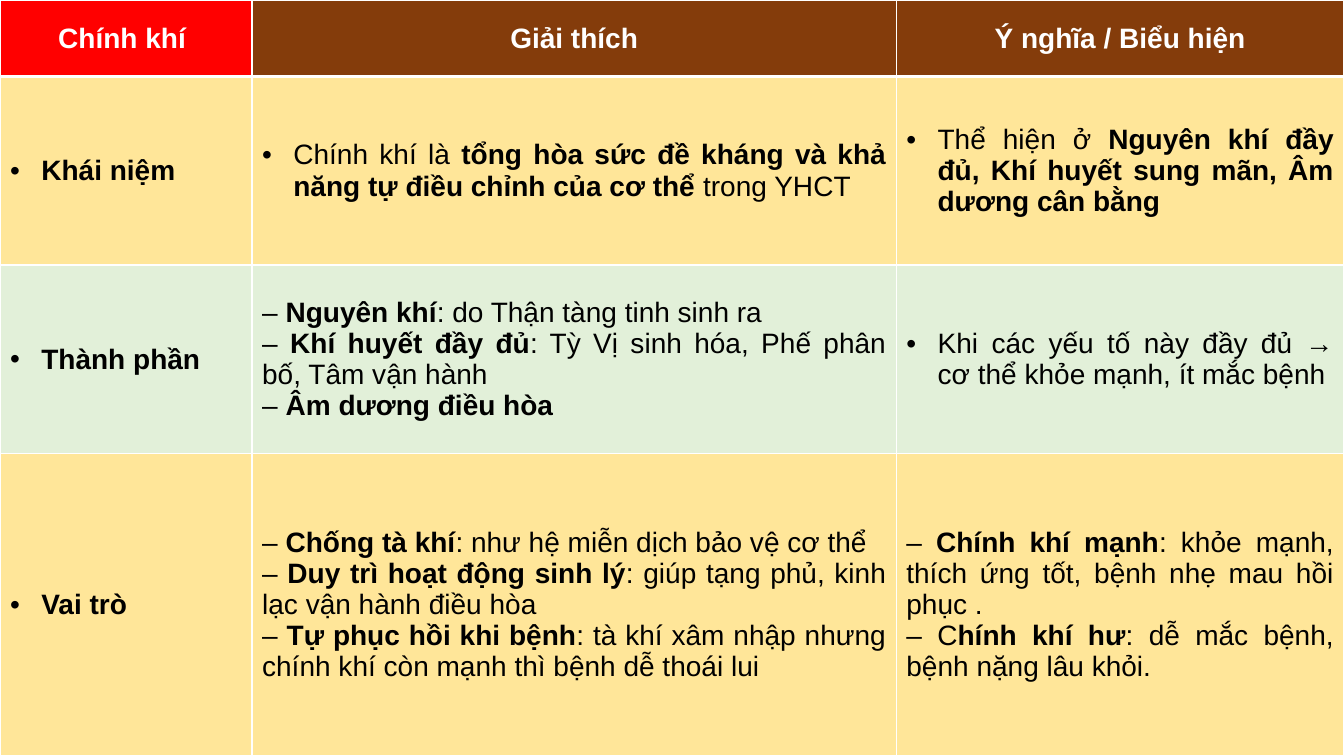
"""Build a slide with a full-page table about Chính khí."""
from lxml.etree import SubElement
from pptx import Presentation
from pptx.dml.color import RGBColor
from pptx.enum.text import MSO_ANCHOR, PP_ALIGN
from pptx.oxml import parse_xml
from pptx.oxml.ns import nsdecls, qn
from pptx.util import Inches, Pt

COLORS = {"white": "FFFFFF", "black": "000000", "red": "FF0000",
          "brown": "843C0B", "yellow": "FFE699", "green": "E2F0D9"}
COL_WIDTHS = [2.5, 6.39, 4.44]
ROW_HEIGHTS = [0.76, 1.87, 1.87, 3]
ROW_FILLS = ["brown", "yellow", "green", "yellow"]

# Asterisks enclose bold text; each string is one paragraph.
ROWS = [
    [["*Chính khí *"], ["*Giải thích*"], ["*Ý nghĩa / Biểu hiện*"]],
    [["*Khái niệm*"],
     ["Chính khí là *tổng hòa sức đề kháng và khả năng tự điều chỉnh "
      "của cơ thể* trong YHCT"],
     ["Thể hiện ở *Nguyên khí đầy đủ, Khí huyết sung mãn, "
      "Âm dương cân bằng*"]],
    [["*Thành phần*"],
     ["– *Nguyên khí*: do Thận tàng tinh sinh ra ",
      "– *Khí huyết đầy đủ*: Tỳ Vị sinh hóa, Phế phân bố, Tâm vận hành ",
      "– *Âm dương điều hòa*"],
     ["Khi các yếu tố này đầy đủ → cơ thể khỏe mạnh, ít mắc bệnh"]],
    [["*Vai trò*"],
     ["– *Chống tà khí*: như hệ miễn dịch bảo vệ cơ thể ",
      "– *Duy trì hoạt động sinh lý*: giúp tạng phủ, kinh lạc vận hành "
      "điều hòa ",
      "– *Tự phục hồi khi bệnh*: tà khí xâm nhập nhưng chính khí còn mạnh "
      "thì bệnh dễ thoái lui"],
     ["– *Chính khí mạnh*: khỏe mạnh, thích ứng tốt, bệnh nhẹ mau hồi "
      "phục .",
      "– C*hính khí hư*: dễ mắc bệnh, bệnh nặng lâu khỏi."]],
]


def set_borders(cell, row):
    """Draw white borders, with a thicker line under the header."""
    tcPr = cell._tc.get_or_add_tcPr()
    for i, side in enumerate("LRTB"):
        thick = (row, side) in [(0, "B"), (1, "T")]
        tcPr.insert(i, parse_xml(
            f'<a:ln{side} {nsdecls("a")} w="{Pt(3 if thick else 1)}">'
            f'<a:solidFill><a:srgbClr val="{COLORS["white"]}"/></a:solidFill>'
            f'</a:ln{side}>'))


def fill_paragraph(p, text, row, col):
    """Write one paragraph with its bullet, alignment and bold parts."""
    header = row == 0
    p.alignment = (PP_ALIGN.CENTER if header else
                   PP_ALIGN.LEFT if col == 0 else PP_ALIGN.JUSTIFY)
    if not header and not text.startswith("–"):
        pPr = p._p.get_or_add_pPr()
        pPr.set("marL", str(Inches(0.31)))
        pPr.set("indent", str(Inches(-0.31)))
        SubElement(pPr, qn("a:buFont")).set("typeface", "Arial")
        SubElement(pPr, qn("a:buChar")).set("char", "•")
    for i, part in enumerate(text.split("*")):
        if part:
            r = p.add_run()
            r.text = part
            r.font.name = "Arial"
            r.font.size = Pt(20)
            r.font.bold = i % 2 == 1
            r.font.color.rgb = RGBColor.from_string(
                COLORS["white" if header else "black"])


prs = Presentation()
prs.slide_width, prs.slide_height = Inches(13.33), Inches(7.5)
s = prs.slides.add_slide(prs.slide_layouts[6])
table = s.shapes.add_table(len(ROWS), len(COL_WIDTHS), 0, 0,
                           prs.slide_width, prs.slide_height).table
for column, width in zip(table.columns, COL_WIDTHS):
    column.width = Inches(width)
for table_row, height in zip(table.rows, ROW_HEIGHTS):
    table_row.height = Inches(height)

for row, cells in enumerate(ROWS):
    for col, paragraphs in enumerate(cells):
        cell = table.cell(row, col)
        cell.vertical_anchor = MSO_ANCHOR.MIDDLE
        cell.fill.solid()
        color = "red" if row == col == 0 else ROW_FILLS[row]
        cell.fill.fore_color.rgb = RGBColor.from_string(COLORS[color])
        set_borders(cell, row)
        tf = cell.text_frame
        for i, text in enumerate(paragraphs):
            p = tf.add_paragraph() if i else tf.paragraphs[0]
            fill_paragraph(p, text, row, col)

prs.save("out.pptx")
